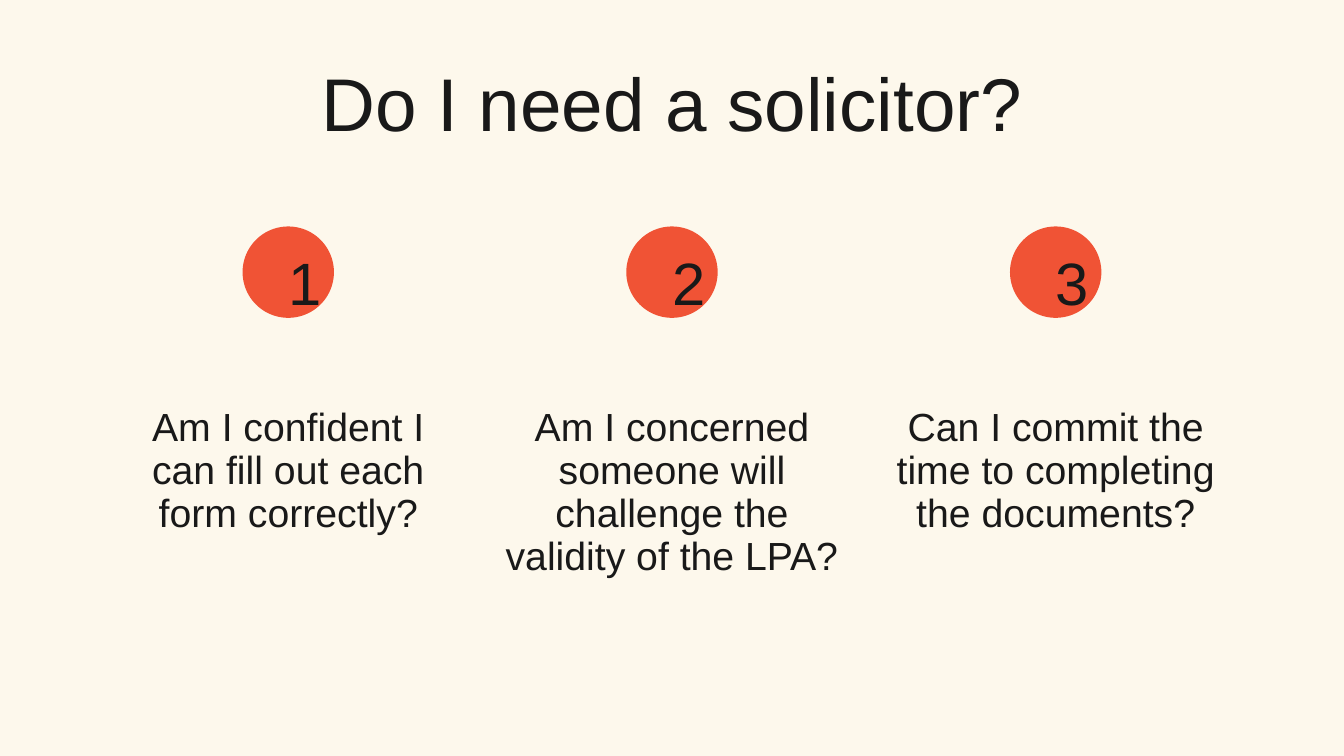
from pptx import Presentation
from pptx.dml.color import RGBColor
from pptx.enum.shapes import MSO_SHAPE as Shape
from pptx.enum.text import MSO_AUTO_SIZE as Fit, PP_ALIGN as Align
from pptx.util import Inches, Pt

CREAM = RGBColor(0xFD, 0xF8, 0xEC)
CORAL = RGBColor(0xF0, 0x53, 0x35)
INK = RGBColor(0x19, 0x19, 0x19)

ITEMS = [
    ("Am I confident I can fill out each form correctly?", 1.92),
    ("Am I concerned someone will challenge the validity of the LPA?", 3.19),
    ("Can I commit the time to completing the documents?", 2.56),
]


def add_text(parent, text, left, top, width, height, *, size, line, level=0):
    """Add a centred text box without margins."""
    box = parent.add_textbox(Inches(left), Inches(top), Inches(width), Inches(height))
    frame = box.text_frame
    frame.word_wrap = True
    frame.auto_size = Fit.SHAPE_TO_FIT_TEXT
    frame.margin_left = frame.margin_right = 0
    frame.margin_top = frame.margin_bottom = 0
    para = frame.paragraphs[0]
    para.level = level
    para.alignment = Align.CENTER
    para.line_spacing = Pt(line)
    run = para.add_run()
    run.text = text
    run.font.name = "Arial"
    run.font.size = Pt(size)
    run.font.color.rgb = INK


def add_badge(slide, label, left, top, size):
    """Group a filled circle with its number."""
    parts = slide.shapes.add_group_shape().shapes
    disc = parts.add_shape(
        Shape.OVAL, Inches(left), Inches(top), Inches(size), Inches(size))
    disc.shadow.inherit = False
    disc.fill.solid()
    disc.fill.fore_color.rgb = CORAL
    disc.line.fill.background()
    add_text(parts, label, left, top - 0.04, size, 1.24,
             size=64, line=100.5, level=1)


def add_column(slide, label, text, left, top, width, height):
    """Place a numbered badge above its question."""
    size = 1.36
    add_badge(slide, label, left + (width - size) / 2, top, size)
    add_text(slide.shapes, text, left, top + 2.67, width, height, size=42, line=46.2)


def build():
    """Build and save the slide."""
    deck = Presentation()
    deck.slide_width, deck.slide_height = Inches(20), Inches(11.25)
    slide = deck.slides.add_slide(deck.slide_layouts[6])
    slide.background.fill.solid()
    slide.background.fill.fore_color.rgb = CREAM
    add_text(slide.shapes, "Do I need a solicitor?", 4.06, 0.85, 11.88, 1.34,
             size=80, line=96)
    width, pitch = 5.01, 5.71
    first = (20 - width) / 2 - pitch
    for i, (text, height) in enumerate(ITEMS):
        add_column(slide, str(i + 1), text, first + i * pitch, 3.37, width, height)
    deck.save("out.pptx")


if __name__ == "__main__":
    build()
